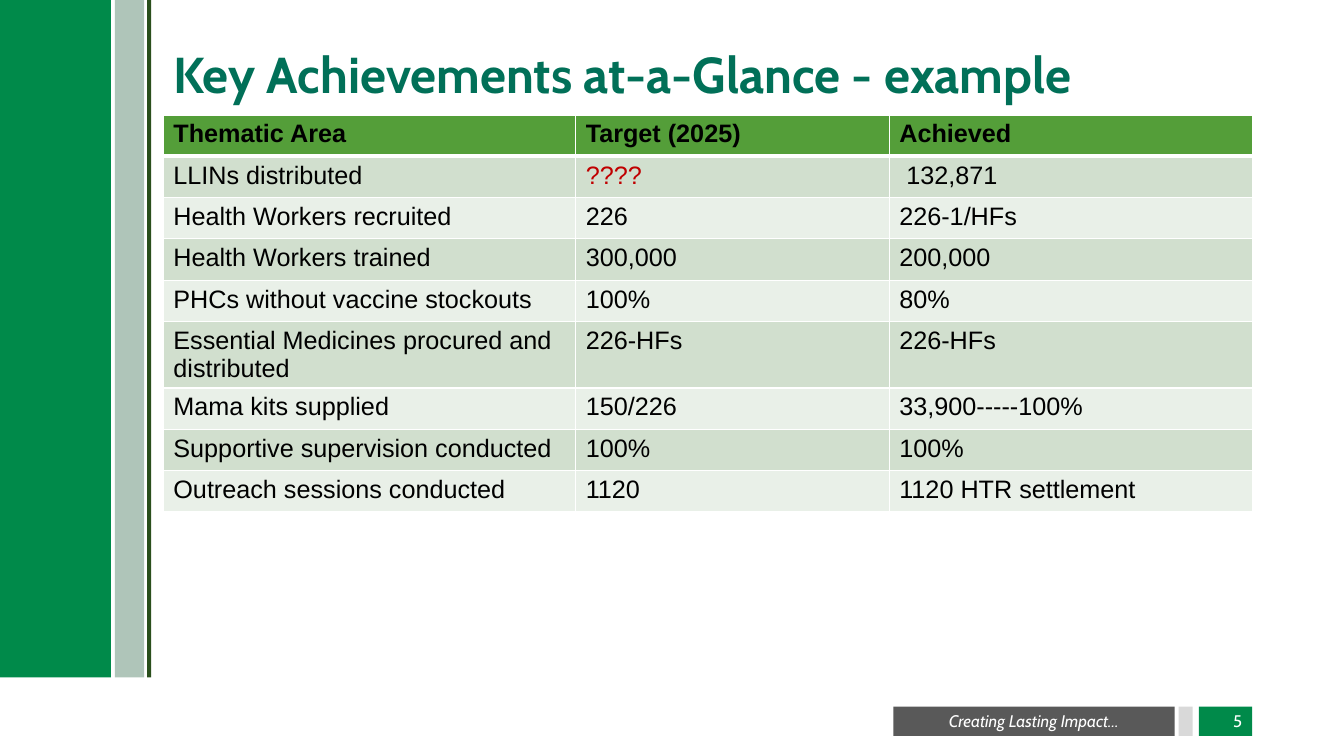
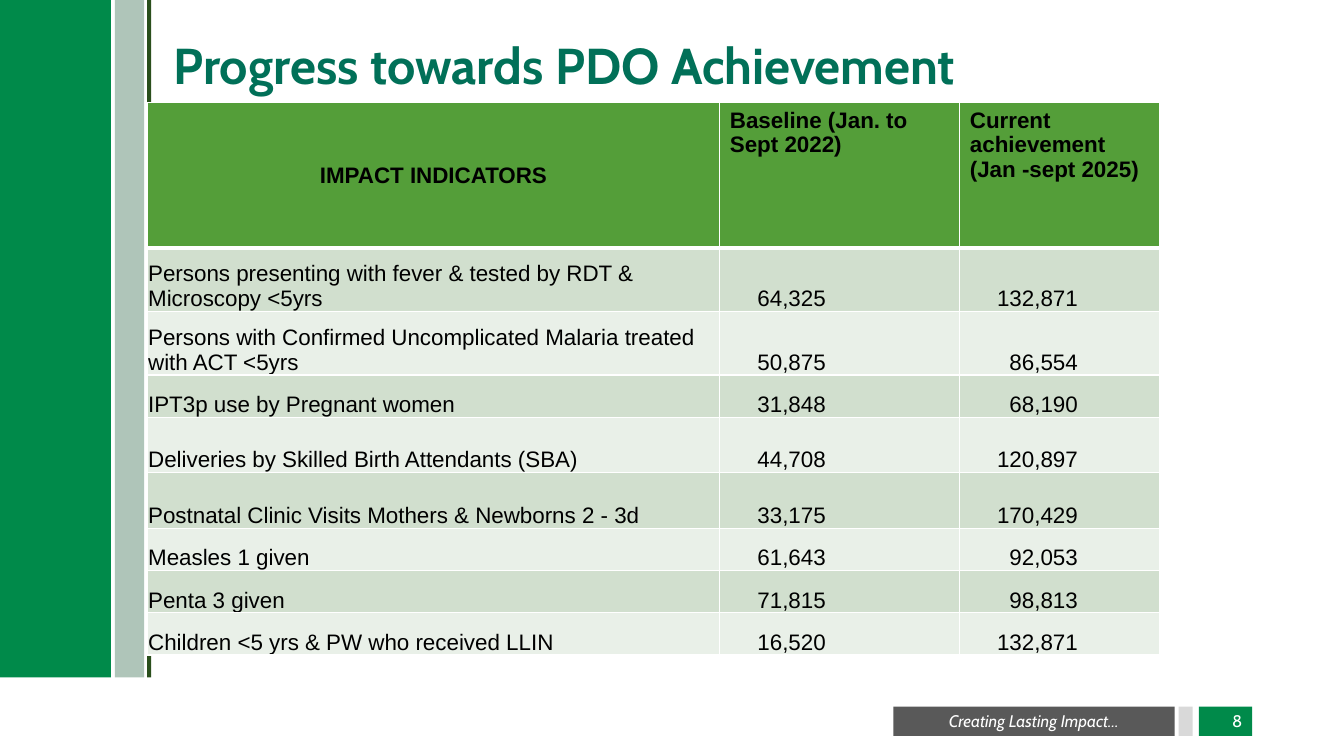
from lxml.etree import SubElement
from pptx import Presentation
from pptx.dml.color import RGBColor
from pptx.enum.shapes import MSO_SHAPE
from pptx.enum.text import MSO_ANCHOR, MSO_AUTO_SIZE, PP_ALIGN
from pptx.oxml.ns import qn
from pptx.util import Inches, Pt

GREEN, SAGE, MOSS = "008A4A", "AFC5B9", "2A4F1C"
GREY, SILVER = "595959", "D9D9D9"
TITLE, BLACK, WHITE, RED = "017058", "000000", "FFFFFF", "C00000"
HEADER, BANDS = "549E39", ("D1DFCE", "E9F0E8")
HEAD_FONT, BODY_FONT = "Cabin", "Arial"

LEFT, WIDTH = 1.62, 10.8
SIDE_HEIGHT = 6.72
FOOT_TOP, FOOT_HEIGHT = 7.01, 0.29
SIDE_BANDS = [(0, 1.1, GREEN), (1.14, 0.29, SAGE), (1.46, 0.04, MOSS)]

ACHIEVEMENTS = [
    ("Thematic Area", "Target (2025)", "Achieved"),
    ("LLINs distributed", "????", " 132,871"),
    ("Health Workers recruited", "226", "226-1/HFs"),
    ("Health Workers trained", "300,000", "200,000"),
    ("PHCs without vaccine stockouts", "100%", "80%"),
    ("Essential Medicines procured and distributed", "226-HFs", "226-HFs"),
    ("Mama kits supplied", "150/226", "33,900-----100%"),
    ("Supportive supervision conducted", "100%", "100%"),
    ("Outreach sessions conducted", "1120", "1120 HTR settlement"),
]
INDICATORS = [
    ("IMPACT INDICATORS", "Baseline (Jan. to Sept 2022)",
     "Current achievement (Jan -sept 2025)"),
    ("Persons presenting with fever & tested by RDT & Microscopy <5yrs",
     "64,325", "132,871"),
    ("Persons with Confirmed Uncomplicated Malaria treated with ACT <5yrs",
     "50,875", "86,554"),
    ("IPT3p use by Pregnant women", "31,848", "68,190"),
    ("Deliveries by Skilled Birth Attendants (SBA)", "44,708", "120,897"),
    ("Postnatal Clinic Visits Mothers & Newborns 2 - 3d", "33,175", "170,429"),
    ("Measles 1 given", "61,643", "92,053"),
    ("Penta 3 given", "71,815", "98,813"),
    ("Children <5 yrs & PW who received LLIN", "16,520", "132,871"),
]


def rgb(color):
    return RGBColor.from_string(color)


def add_text(tf, text, size, font, color, align=PP_ALIGN.LEFT, bold=False, italic=False):
    p = tf.paragraphs[0]
    p.alignment = align
    r = p.add_run()
    r.text = text
    r.font.size, r.font.name = Pt(size), font
    r.font.bold, r.font.italic = bold, italic
    r.font.color.rgb = rgb(color)
    return p


def add_band(slide, left, top, width, height, color):
    sp = slide.shapes.add_shape(MSO_SHAPE.RECTANGLE, *map(Inches, (left, top, width, height)))
    sp.shadow.inherit = False
    sp.fill.solid()
    sp.fill.fore_color.rgb = rgb(color)
    sp.line.fill.background()
    sp.text_frame.vertical_anchor = MSO_ANCHOR.MIDDLE
    return sp


def decorate_layout(layout, slide):
    motto = add_band(slide, 8.86, FOOT_TOP, 2.79, FOOT_HEIGHT, GREY)
    add_text(motto.text_frame, "Creating Lasting Impact…", 12, HEAD_FONT, WHITE,
             PP_ALIGN.CENTER, italic=True)
    bands = [motto, add_band(slide, 11.69, FOOT_TOP, 0.14, FOOT_HEIGHT, SILVER)]
    bands += [add_band(slide, left, 0, width, SIDE_HEIGHT, color)
              for left, width, color in SIDE_BANDS]
    for sp in bands:
        layout.shapes.element.append(sp.element)


def add_title(slide, text, top, height):
    sp = slide.shapes.title
    sp.left, sp.top, sp.width, sp.height = map(Inches, (LEFT, top, WIDTH, height))
    tf = sp.text_frame
    tf.word_wrap, tf.auto_size = True, MSO_AUTO_SIZE.NONE
    tf.vertical_anchor = MSO_ANCHOR.MIDDLE
    p = add_text(tf, text, 36, HEAD_FONT, TITLE, bold=True)
    p.line_spacing = 0.9


def add_page_number(slide, number):
    sp = add_band(slide, 11.89, FOOT_TOP, 0.53, FOOT_HEIGHT, GREEN)
    add_text(sp.text_frame, str(number), 12, HEAD_FONT, WHITE, PP_ALIGN.RIGHT)


def set_borders(cell, top, bottom):
    tcPr = cell._tc.get_or_add_tcPr()
    for side, width in (("L", 1), ("R", 1), ("T", top), ("B", bottom)):
        ln = SubElement(tcPr, qn(f"a:ln{side}"), w=str(Pt(width)))
        fill = SubElement(ln, qn("a:solidFill"))
        SubElement(fill, qn("a:srgbClr"), val=WHITE)


def add_table(slide, rows, left, top, widths, heights, size):
    frame = slide.shapes.add_table(len(rows), len(widths), *map(
        Inches, (left, top, sum(widths), sum(heights))))
    table = frame.table
    table.horz_banding = False
    for column, width in zip(table.columns, widths):
        column.width = Inches(width)
    for i, (row, height, values) in enumerate(zip(table.rows, heights, rows)):
        row.height = Inches(height)
        for cell, value in zip(row.cells, values):
            set_borders(cell, 3 if i == 1 else 1, 3 if i == 0 else 1)
            cell.fill.solid()
            cell.fill.fore_color.rgb = rgb(BANDS[(i - 1) % 2] if i else HEADER)
            color = RED if value == "????" else BLACK
            add_text(cell.text_frame, value, size, BODY_FONT, color, bold=i == 0)
    return table


def set_cell(cell, anchor, align, right=0.01):
    cell.vertical_anchor = anchor
    cell.margin_left = cell.margin_top = Inches(0.01)
    cell.margin_right, cell.margin_bottom = Inches(right), 0
    cell.text_frame.paragraphs[0].alignment = align


def achievements_slide(slide):
    add_title(slide, "Key Achievements at-a-Glance - example", 0.4, 0.74)
    add_table(slide, ACHIEVEMENTS, LEFT, 1.14, (4.09, 3.11, 3.6),
              [0.41] * len(ACHIEVEMENTS), 18)
    add_page_number(slide, 5)


def progress_slide(slide):
    add_title(slide, "Progress towards PDO Achievement", 0.15, 1.06)
    heights = (1.44, 0.63, 0.63, 0.42, 0.55, 0.55, 0.42, 0.42, 0.42)
    table = add_table(slide, INDICATORS, 1.46, 1.02, (5.68, 2.38, 1.98), heights, 16)
    set_cell(table.cell(0, 0), MSO_ANCHOR.MIDDLE, PP_ALIGN.CENTER)
    for i in range(1, len(INDICATORS)):
        set_cell(table.cell(i, 0), MSO_ANCHOR.BOTTOM, PP_ALIGN.LEFT)
        for column, right in ((1, 1.33), (2, 0.81)):
            set_cell(table.cell(i, column), MSO_ANCHOR.BOTTOM, PP_ALIGN.RIGHT, right)
    add_page_number(slide, 8)


def main():
    prs = Presentation()
    prs.slide_width, prs.slide_height = Inches(13.33), Inches(7.5)
    layout = prs.slide_layouts[5]
    slides = [prs.slides.add_slide(layout) for _ in range(2)]
    decorate_layout(layout, slides[0])
    achievements_slide(slides[0])
    progress_slide(slides[1])
    prs.save("out.pptx")


if __name__ == "__main__":
    main()
